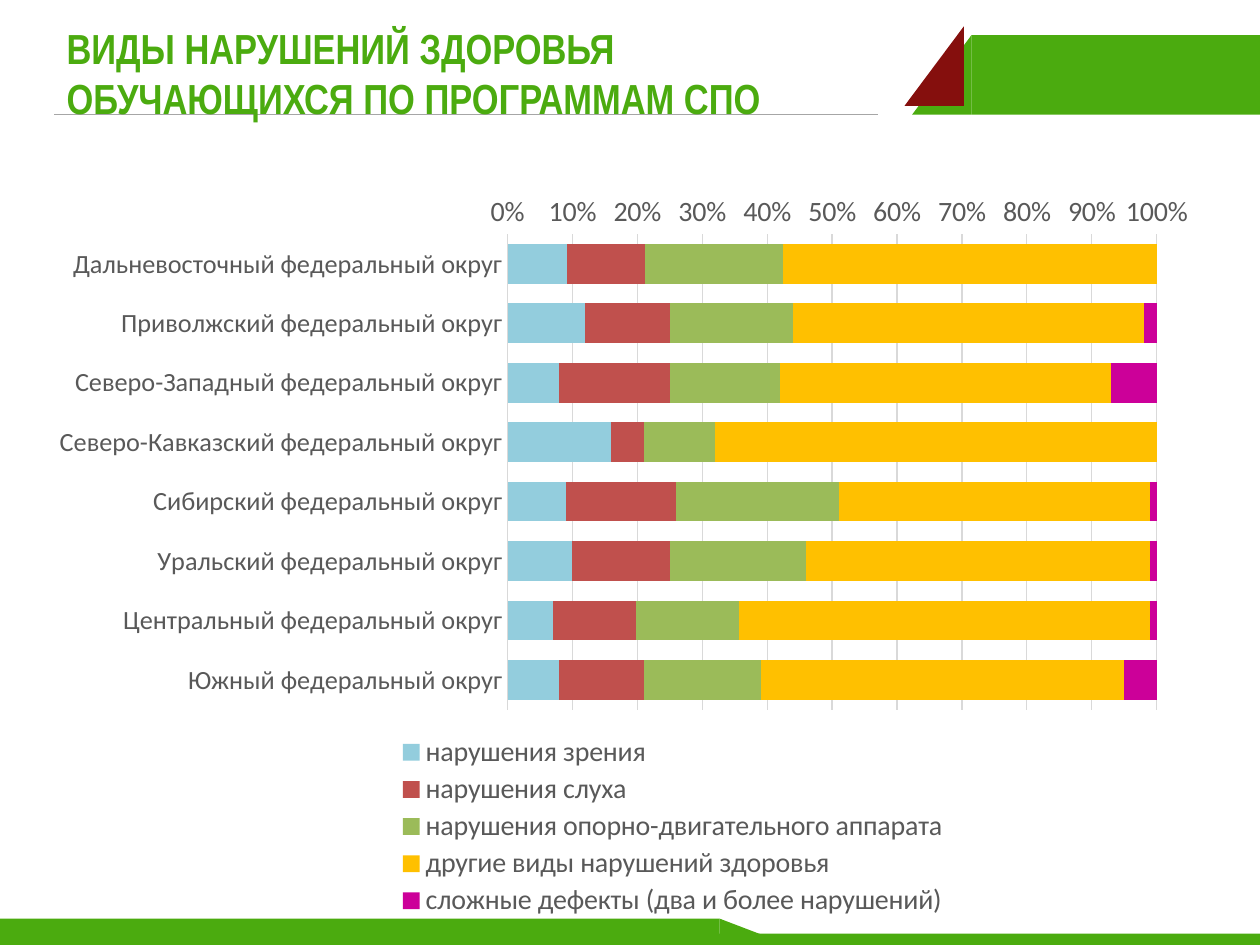
from lxml import etree
from pptx import Presentation
from pptx.chart.data import CategoryChartData
from pptx.dml.color import RGBColor
from pptx.enum.chart import XL_CHART_TYPE, XL_LEGEND_POSITION, XL_TICK_LABEL_POSITION, XL_TICK_MARK
from pptx.enum.shapes import MSO_CONNECTOR, MSO_SHAPE
from pptx.enum.text import MSO_ANCHOR
from pptx.oxml import parse_xml
from pptx.oxml.ns import nsdecls, qn
from pptx.util import Inches, Pt

GREEN, DARK_RED, GREY, PALE_GREY = "4BAB0F", "850F0D", "595959", "D9D9D9"
DISTRICTS = [name + " федеральный округ" for name in (
    "Дальневосточный", "Приволжский", "Северо-Западный", "Северо-Кавказский",
    "Сибирский", "Уральский", "Центральный", "Южный")]
IMPAIRMENTS = [
    ("нарушения зрения", "93CDDD", (9, 12, 8, 16, 9, 10, 7, 8)),
    ("нарушения слуха", "C0504D", (12, 13, 17, 5, 17, 15, 13, 13)),
    ("нарушения опорно-двигательного аппарата", "9BBB59", (21, 19, 17, 11, 25, 21, 16, 18)),
    ("другие виды нарушений здоровья", "FFC000", (57, 54, 51, 68, 48, 53, 64, 56)),
    ("сложные дефекты (два и более нарушений)", "CC0099", (0, 2, 7, 0, 1, 1, 1, 5)),
]


def color(value):
    return RGBColor.from_string(value)


def style_font(font, size, fill, name="Calibri", bold=False):
    font.size, font.name, font.bold = Pt(size), name, bold
    font.color.rgb = color(fill)


def style_line(line, fill):
    line.color.rgb = color(fill)
    line.width = Pt(0.75)


def add_text(slide, box, text, **font_format):
    frame = slide.shapes.add_textbox(*map(Inches, box)).text_frame
    frame.word_wrap = True
    frame.vertical_anchor = MSO_ANCHOR.TOP
    run = frame.paragraphs[0].add_run()
    run.text = text
    style_font(run.font, **font_format)


def add_block(slide, preset, box, fill, mirrored=False):
    block = slide.shapes.add_shape(preset, *map(Inches, box))
    block.shadow.inherit = False
    block.fill.solid()
    block.fill.fore_color.rgb = color(fill)
    block.line.fill.background()
    if mirrored:
        block._element.spPr.find(qn("a:xfrm")).set("flipH", "1")


def add_header(slide, left, top, width):
    # Rule under the title
    rule_y = Inches(top + 0.63)
    rule = slide.shapes.add_connector(
        MSO_CONNECTOR.STRAIGHT, Inches(0.43), rule_y, Inches(6.97), rule_y)
    style_line(rule.line, "A6A6A6")
    etree.SubElement(rule._element.spPr, qn("a:effectLst"))
    # Green band with a slanted end and a dark red accent
    slant = 0.47
    add_block(slide, MSO_SHAPE.RECTANGLE, (left + slant, top, width - slant, 0.63), GREEN)
    for x, y, fill in ((left, top, GREEN), (left - 0.06, top - 0.07, DARK_RED)):
        add_block(slide, MSO_SHAPE.RIGHT_TRIANGLE, (x, y, slant, 0.63), fill, mirrored=True)


def add_footer(slide, left, top, width, height):
    tall_width, slant, thin_height = 5.71, 0.55, 0.09
    add_block(slide, MSO_SHAPE.RECTANGLE, (left, top, tall_width, height), GREEN)
    add_block(slide, MSO_SHAPE.RIGHT_TRIANGLE, (left + tall_width, top, slant, height), GREEN)
    add_block(slide, MSO_SHAPE.RECTANGLE,
              (left + 2.4, top + height - thin_height, width - 2.4, thin_height), GREEN)


def manual_layout(x, y, w, h, inner=False):
    target = '<c:layoutTarget val="inner"/>' if inner else ""
    sizes = "".join(f'<c:{tag} val="{value}"/>' for tag, value in zip("xywh", (x, y, w, h)))
    return parse_xml(
        f'<c:layout {nsdecls("c")}><c:manualLayout>{target}'
        f'<c:xMode val="edge"/><c:yMode val="edge"/>{sizes}</c:manualLayout></c:layout>')


def place_plot(chart, *box):
    plot_area = chart._chartSpace.chart.plotArea
    for layout in plot_area.findall(qn("c:layout")):
        plot_area.remove(layout)
    plot_area.insert(0, manual_layout(*box, inner=True))


def place_legend(legend, *box):
    element = legend._element
    for layout in element.findall(qn("c:layout")):
        element.remove(layout)
    element.find(qn("c:legendPos")).addnext(manual_layout(*box))


def add_impairment_chart(slide, box):
    data = CategoryChartData()
    data.categories = DISTRICTS
    for name, _, shares in IMPAIRMENTS:
        data.add_series(name, shares)
    chart = slide.shapes.add_chart(
        XL_CHART_TYPE.BAR_STACKED_100, *map(Inches, box), data).chart
    chart.has_title = False
    style_font(chart.font, 16, "000000")

    # Bars
    plot = chart.plots[0]
    plot.gap_width, plot.overlap, plot.vary_by_categories = 50, 100, False
    for series, (_, fill, _) in zip(plot.series, IMPAIRMENTS):
        series.format.fill.solid()
        series.format.fill.fore_color.rgb = color(fill)
        series.invert_if_negative = False

    # Axes
    districts, shares = chart.category_axis, chart.value_axis
    for axis, size in ((districts, 15), (shares, 16)):
        axis.major_tick_mark = axis.minor_tick_mark = XL_TICK_MARK.NONE
        axis.tick_label_position = XL_TICK_LABEL_POSITION.NEXT_TO_AXIS
        style_font(axis.tick_labels.font, size, GREY)
    districts.reverse_order = True
    style_line(districts.format.line, PALE_GREY)
    shares.minimum_scale, shares.maximum_scale, shares.major_unit = 0, 1, 0.1
    shares.tick_labels.number_format = "0%"
    shares.tick_labels.number_format_is_linked = False
    shares.format.line.fill.background()
    shares.has_major_gridlines = True
    style_line(shares.major_gridlines.format.line, PALE_GREY)

    # Legend in one column under the bars
    chart.has_legend = True
    chart.legend.position = XL_LEGEND_POSITION.BOTTOM
    chart.legend.include_in_layout = False
    style_font(chart.legend.font, 16, GREY)
    place_plot(chart, 0.4, 0.08, 0.55, 0.63)
    place_legend(chart.legend, 0.3, 0.74, 0.48, 0.25)


def main():
    deck = Presentation()
    deck.slide_width, deck.slide_height = Inches(10), Inches(7.5)
    slide = deck.slides.add_slide(deck.slide_layouts[6])
    add_header(slide, 7.24, 0.28, 2.76)
    add_footer(slide, 0, 7.29, 10, 0.21)
    add_text(slide, (0.43, 0.13, 6.7, 1.25),
             "ВИДЫ НАРУШЕНИЙ ЗДОРОВЬЯ ОБУЧАЮЩИХСЯ ПО ПРОГРАММАМ СПО",
             size=24, fill=GREEN, name="Arial Narrow", bold=True)
    add_impairment_chart(slide, (0.28, 1.38, 9.37, 5.99))
    deck.save("out.pptx")


if __name__ == "__main__":
    main()
